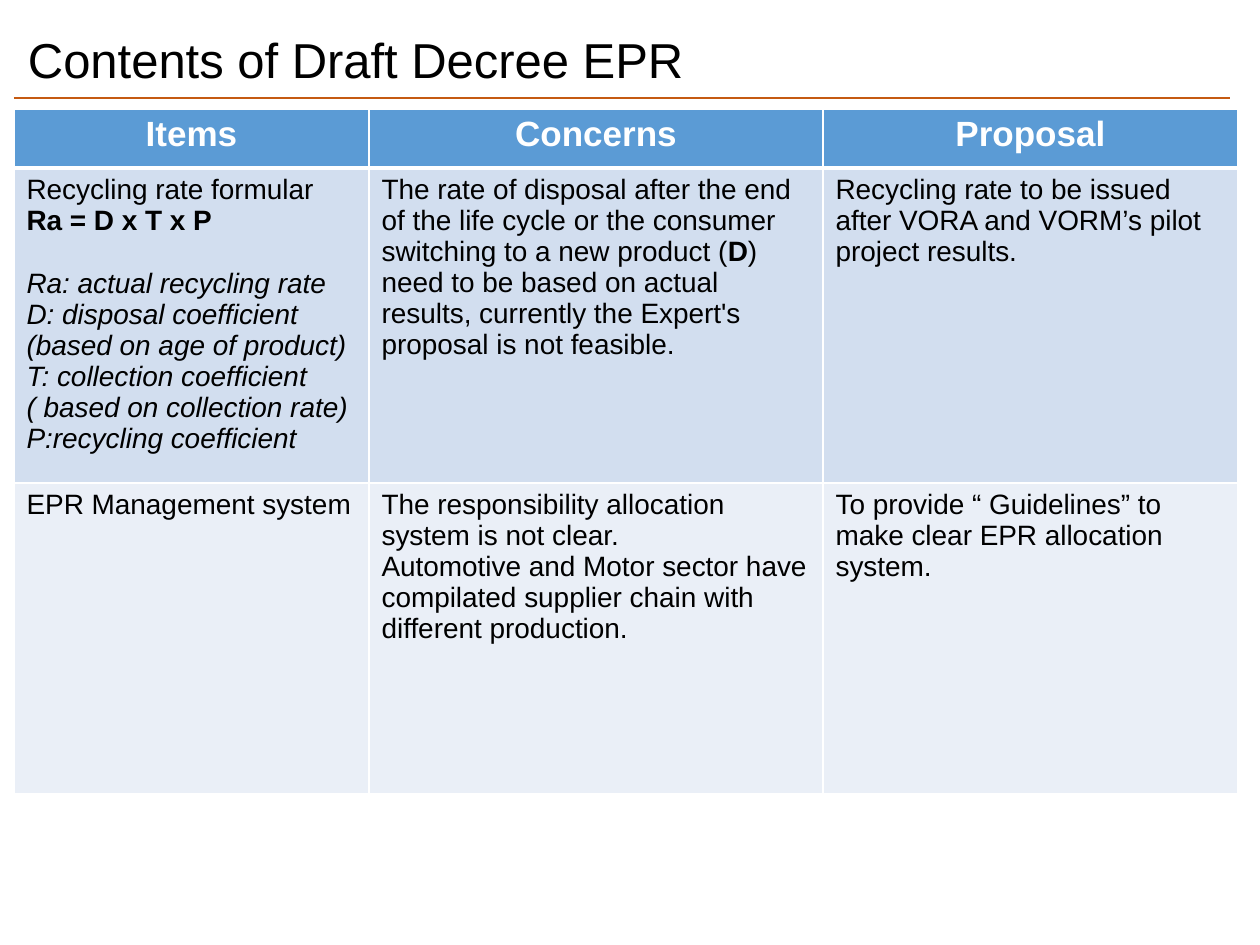
from lxml import etree
from pptx import Presentation
from pptx.dml.color import RGBColor
from pptx.enum.shapes import MSO_CONNECTOR
from pptx.enum.text import MSO_ANCHOR, PP_ALIGN
from pptx.oxml.ns import qn
from pptx.util import Emu, Pt

STRAIGHT = MSO_CONNECTOR.STRAIGHT
MIDDLE = MSO_ANCHOR.MIDDLE
LEFT, CENTER = PP_ALIGN.LEFT, PP_ALIGN.CENTER

COLORS = {
    "text": "000000",
    "white": "FFFFFF",
    "rule": "C55A11",
    "header": "5B9BD5",
    "band1": "D2DEEF",
    "band2": "EAEFF7",
}
FONT = "Arial"
PX_PER_INCH = 126


def px(n):
    return Emu(round(n * 914400 / PX_PER_INCH))


def rgb(name):
    return RGBColor.from_string(COLORS[name])


class SlideBuilder:
    def __init__(self, slide):
        self.slide = slide

    def style(self, r, size, color, bold=False, italic=False):
        r.font.name = FONT
        r.font.size = Pt(size)
        r.font.color.rgb = rgb(color)
        r.font.bold = bold
        r.font.italic = italic

    def title(self, x, y, w, h, text, size, inset):
        sp = self.slide.shapes.add_textbox(px(x), px(y), px(w), px(h))
        tf = sp.text_frame
        tf.text = text
        tf.word_wrap = True
        tf.vertical_anchor = MIDDLE
        tf.margin_left = px(inset)
        self.style(tf.paragraphs[0].runs[0], size, "text")

    def rule(self, x1, x2, y, color, width):
        line = self.slide.shapes.add_connector(STRAIGHT, px(x1), px(y), px(x2), px(y))
        line.line.color.rgb = rgb(color)
        line.line.width = Pt(width)
        etree.SubElement(line._element.spPr, qn("a:effectLst"))

    def borders(self, cell, widths):
        tcPr = cell._tc.get_or_add_tcPr()
        for i, (side, width) in enumerate(widths.items()):
            ln = etree.Element(qn(f"a:ln{side}"), w=str(Pt(width)))
            fill = etree.SubElement(ln, qn("a:solidFill"))
            etree.SubElement(fill, qn("a:srgbClr"), val=COLORS["white"])
            tcPr.insert(i, ln)

    def cell(self, cell, paragraphs, fill, size, color, align=LEFT, bold=False):
        """Each paragraph is (space before, [(text, marks)]); marks hold b or i."""
        cell.fill.solid()
        cell.fill.fore_color.rgb = rgb(fill)
        tf = cell.text_frame
        for i, (space, runs) in enumerate(paragraphs):
            p = tf.add_paragraph() if i else tf.paragraphs[0]
            p.alignment = align
            p.space_before = Pt(space)
            for text, marks in runs:
                r = p.add_run()
                r.text = text
                self.style(r, size, color, bold or "b" in marks, "i" in marks)

    def table(self, x, y, col_widths, row_heights, header, body):
        table = self.slide.shapes.add_table(
            len(row_heights), len(col_widths), px(x), px(y),
            px(sum(col_widths)), px(sum(row_heights))).table
        for col, width in zip(table.columns, col_widths):
            col.width = px(width)
        for row, height in zip(table.rows, row_heights):
            row.height = px(height)

        for c, text in enumerate(header):
            self.cell(table.cell(0, c), [para(text)], "header", 20, "white", CENTER, True)
        for r, row in enumerate(body, 1):
            for c, paragraphs in enumerate(row):
                self.cell(table.cell(r, c), paragraphs, f"band{r}", 16, "text")

        # White grid, with a heavier line under the header
        for r in range(len(row_heights)):
            for c in range(len(col_widths)):
                self.borders(table.cell(r, c), {
                    "L": 1, "R": 1, "T": 3 if r == 1 else 1, "B": 3 if r == 0 else 1})


def para(text, marks="", space=0):
    return space, [(text, marks)]


HEADER = ["Items", "Concerns", "Proposal"]
BODY = [
    [
        [
            para("Recycling rate formular"),
            para("Ra = D x T x P", "b"),
            para("Ra: actual recycling rate", "i", 18),
            para("D: disposal coefficient (based on age of product)", "i"),
            para("T: collection coefficient ( based on collection rate)", "i"),
            para("P:recycling coefficient", "i"),
        ],
        [(0, [
            ("The rate of disposal after the end of the life cycle or the consumer "
             "switching to a new product (", ""),
            ("D", "b"),
            (") need to be based on actual results, currently the Expert's "
             "proposal is not feasible.", ""),
        ])],
        [para("Recycling rate to be issued after VORA and VORM’s pilot project results.")],
    ],
    [
        [para("EPR Management system")],
        [
            para("The responsibility allocation system is not clear."),
            para("Automotive and Motor sector have compilated supplier chain with "
                 "different production."),
        ],
        [para("To provide “ Guidelines” to make clear EPR allocation system.")],
    ],
]


def main():
    prs = Presentation()
    prs.slide_width, prs.slide_height = px(1260), px(945)
    s = SlideBuilder(prs.slides.add_slide(prs.slide_layouts[6]))

    # Title and rule
    s.rule(14, 1230, 98, "rule", 1.5)
    s.title(0, 18, 704, 81, "Contents of Draft Decree EPR", 28, inset=28)

    # Concerns table
    s.table(14, 109, [355, 454, 415], [59, 315, 311], HEADER, BODY)

    prs.save("out.pptx")


if __name__ == "__main__":
    main()
